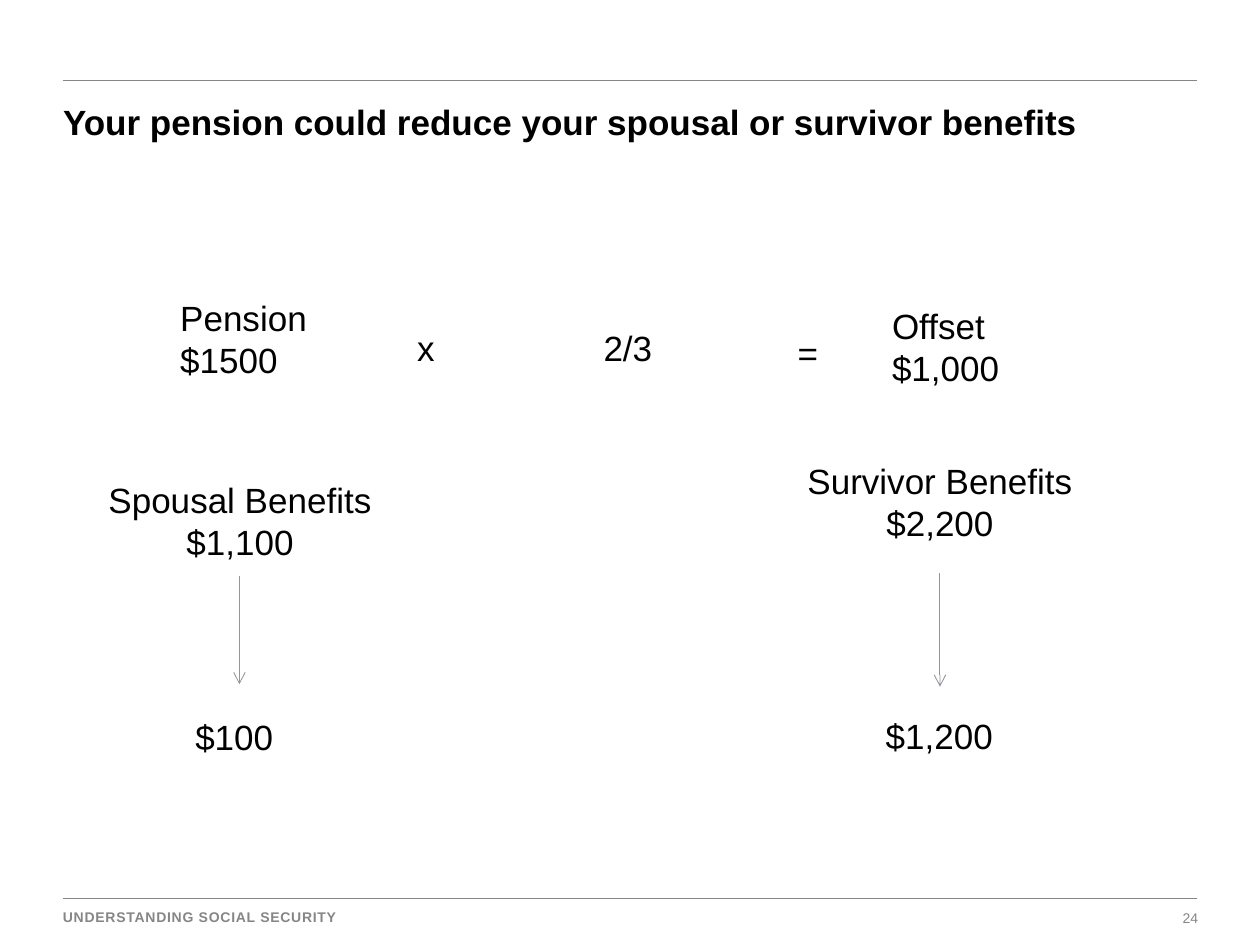
from dataclasses import dataclass

from pptx import Presentation
from pptx.dml.color import RGBColor
from pptx.enum.shapes import MSO_CONNECTOR
from pptx.enum.text import MSO_AUTO_SIZE, PP_ALIGN
from pptx.oxml.ns import qn
from pptx.util import Inches, Pt

STRAIGHT = MSO_CONNECTOR.STRAIGHT
LEFT, CENTER, RIGHT = PP_ALIGN.LEFT, PP_ALIGN.CENTER, PP_ALIGN.RIGHT
FIT_SHAPE, NO_FIT = MSO_AUTO_SIZE.SHAPE_TO_FIT_TEXT, MSO_AUTO_SIZE.NONE


@dataclass(frozen=True)
class Theme:
    """Colours, font and type sizes of the slide."""
    font: str = "Arial"
    ink: str = "000000"
    muted: str = "868686"
    arrow: str = "93959B"
    body: int = 20
    small: int = 8


def write(tf, text, theme, size=None, color=None, bold=False, align=LEFT, spacing=0):
    """Fill a text frame with one paragraph per line of text."""
    for i, line in enumerate(text.split("\n")):
        p = tf.add_paragraph() if i else tf.paragraphs[0]
        p.alignment = align
        r = p.add_run()
        r.text = line
        r.font.name = theme.font
        r.font.size = Pt(size or theme.body)
        r.font.bold = bold
        r.font.color.rgb = RGBColor.from_string(color or theme.ink)
        if spacing:
            r.font._element.set("spc", str(round(spacing * 100)))


class Deck:
    """Holds the theme and the current slide."""

    def __init__(self, prs, theme):
        """Add a blank slide."""
        self.theme = theme
        self.s = prs.slides.add_slide(prs.slide_layouts[6])

    def text(self, x, y, w, h, text, wrap=False, fit=FIT_SHAPE, **fmt):
        """Add a text box without margins."""
        tf = self.s.shapes.add_textbox(Inches(x), Inches(y), Inches(w), Inches(h)).text_frame
        tf.margin_left = tf.margin_top = tf.margin_right = tf.margin_bottom = 0
        tf.word_wrap = wrap
        tf.auto_size = fit
        write(tf, text, self.theme, **fmt)

    def line(self, x1, y1, x2, y2, color, width):
        """Add a straight line without a shadow."""
        c = self.s.shapes.add_connector(STRAIGHT, Inches(x1), Inches(y1), Inches(x2), Inches(y2))
        c.line.color.rgb = RGBColor.from_string(color)
        c.line.width = Pt(width)
        sp_pr = c._element.spPr
        sp_pr.append(sp_pr.makeelement(qn("a:effectLst"), {}))
        return c

    def rule(self, y):
        """Add a horizontal rule between the margins."""
        self.line(0.5, y, 9.5, y, self.theme.muted, 1)

    def down_arrow(self, x, top, bottom):
        """Add a thin arrow pointing down."""
        c = self.line(x, top, x, bottom, self.theme.arrow, 0.5)
        ln = c.line._get_or_add_ln()
        ln.append(ln.makeelement(qn("a:tailEnd"), {"type": "arrow"}))


def main():
    """Build and save the slide."""
    prs = Presentation()
    prs.slide_width, prs.slide_height = Inches(10), Inches(7.5)
    theme = Theme()
    deck = Deck(prs, theme)

    for y in (0.64, 7.13):
        deck.rule(y)
    small = {"size": theme.small, "color": theme.muted}
    deck.text(9.37, 7.22, 0.14, 0.13, "24", align=RIGHT, **small)
    deck.text(0.5, 7.21, 3.1, 0.15, "UNDERSTANDING SOCIAL SECURITY",
              fit=NO_FIT, bold=True, spacing=0.4, **small)
    deck.text(0.5, 0.8, 8.99, 0.34,
              "Your pension could reduce your spousal or survivor benefits", wrap=True, bold=True)

    deck.text(1.43, 2.35, 1.02, 0.67, "Pension\n$1500")
    deck.text(3.31, 2.59, 0.52, 0.34, "x", wrap=True)
    deck.text(4.79, 2.59, 0.6, 0.34, "2/3", wrap=True)
    deck.text(6.33, 2.63, 0.16, 0.34, "=")
    deck.text(7.08, 2.42, 0.86, 0.67, "Offset\n$1,000")

    deck.text(0.85, 3.8, 2.11, 0.67, "Spousal Benefits\n$1,100", align=CENTER)
    deck.down_arrow(1.9, 4.57, 5.43)
    deck.text(1.55, 5.68, 0.7, 0.34, "$100")

    deck.text(6.4, 3.65, 2.12, 0.67, "Survivor Benefits\n$2,200", align=CENTER)
    deck.down_arrow(7.46, 4.55, 5.45)
    deck.text(7.03, 5.67, 0.86, 0.34, "$1,200")

    prs.save("out.pptx")


if __name__ == "__main__":
    main()
